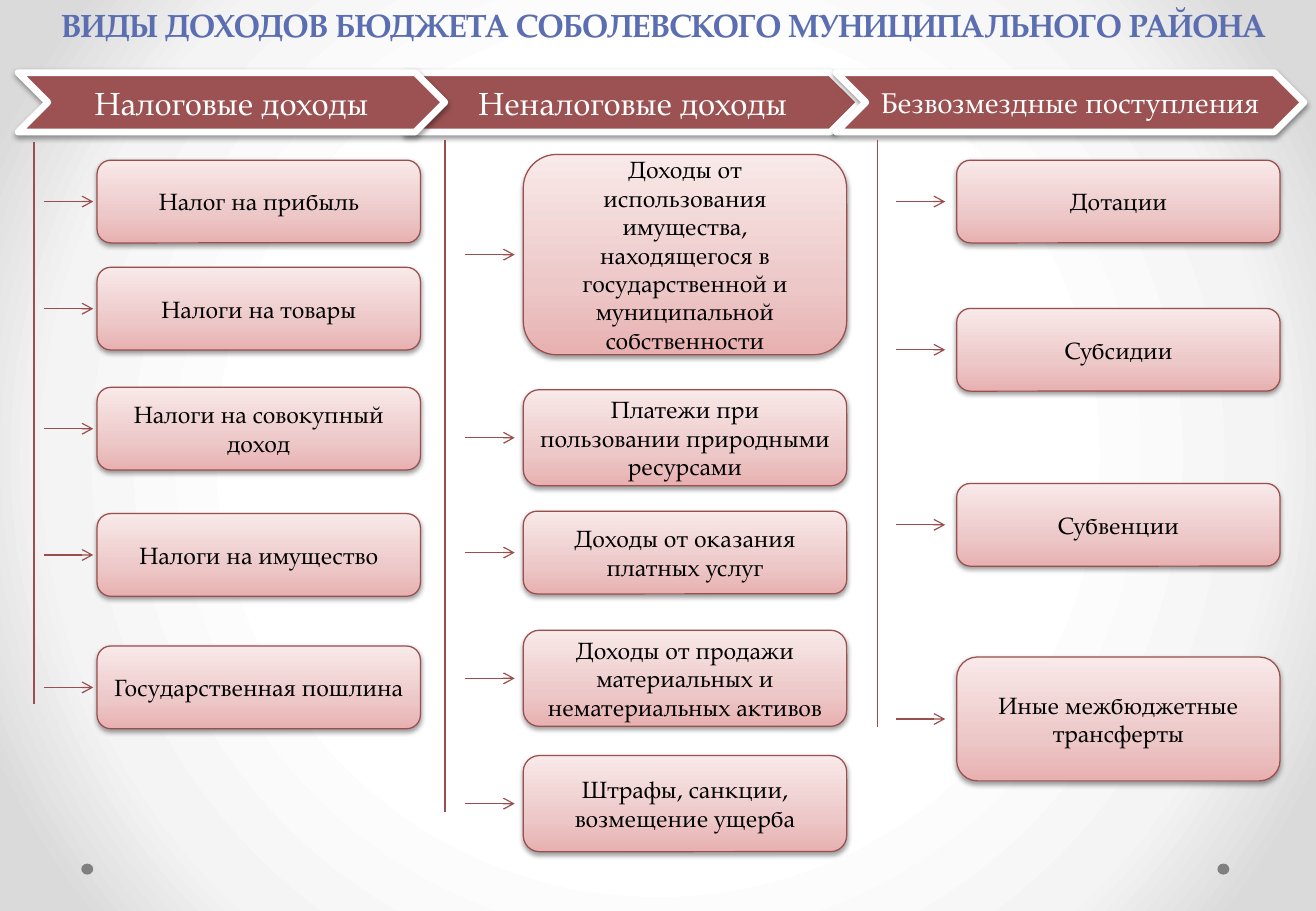
import pptx
import pptx.util
import pptx.dml.color
import pptx.enum.shapes
import pptx.enum.text
import pptx.oxml
import pptx.oxml.ns
from pptx.util import Cm

SHAPES = pptx.enum.shapes.MSO_SHAPE
NAMESPACE = pptx.oxml.ns.nsdecls("a")
BOX_WIDTH = 6.76
ARROW_LENGTH = 1.04


def color(value):
    return pptx.dml.color.RGBColor.from_string(value)


def set_attributes(target, values):
    for name, value in values.items():
        setattr(target, name, value)


class IncomeSlide:
    font_name = "TeX Gyre Pagella"
    line_color = "9A4E4E"
    banner_color = "9C5252"
    title_color = "5A6EB1"
    dot_color = "808080"
    box_stops = ((0, "E8B0B0"), (35, "EDC8C8"), (100, "F9E9E9"))
    background_stops = ((50, "FFFFFF"), (76, "F4F4F4"), (92, "DADADA"))

    def __init__(self, presentation):
        self.slide = presentation.slides.add_slide(presentation.slide_layouts[6])

    def gradient(self, fill, element, stops, direction):
        fill.gradient()
        current = element.find(".//" + pptx.oxml.ns.qn("a:gradFill"))
        stop_xml = "".join(
            f'<a:gs pos="{position * 1000}"><a:srgbClr val="{value}"/></a:gs>'
            for position, value in stops
        )
        replacement = pptx.oxml.parse_xml(
            f'<a:gradFill {NAMESPACE} rotWithShape="1">'
            f"<a:gsLst>{stop_xml}</a:gsLst>{direction}</a:gradFill>"
        )
        current.getparent().replace(current, replacement)

    def background(self):
        direction = (
            '<a:path path="circle">'
            '<a:fillToRect l="50000" t="50000" r="50000" b="50000"/></a:path>'
        )
        self.gradient(self.slide.background.fill, self.slide.element,
                      self.background_stops, direction)

    def shadow(self, shape):
        shape.shadow.inherit = False
        effects = shape.element.spPr.find(pptx.oxml.ns.qn("a:effectLst"))
        effects.append(pptx.oxml.parse_xml(
            f'<a:outerShdw {NAMESPACE} blurRad="39370" dist="20320" dir="5400000" '
            'rotWithShape="0"><a:srgbClr val="000000"><a:alpha val="38000"/>'
            "</a:srgbClr></a:outerShdw>"
        ))

    def label(self, shape, text, size, text_color, bold=False):
        frame = shape.text_frame
        set_attributes(frame, {
            "word_wrap": True,
            "vertical_anchor": pptx.enum.text.MSO_ANCHOR.MIDDLE,
        })
        paragraph = frame.paragraphs[0]
        paragraph.alignment = pptx.enum.text.PP_ALIGN.CENTER
        run = paragraph.add_run()
        run.text = text
        set_attributes(run.font, {
            "name": self.font_name, "size": pptx.util.Pt(size), "bold": bold,
        })
        run.font.color.rgb = color(text_color)

    def title(self, text):
        shape = self.slide.shapes.add_textbox(Cm(-0.66), Cm(0), Cm(29.06), Cm(1.52))
        self.label(shape, text, 19, self.title_color, bold=True)
        shape.text_frame.vertical_anchor = pptx.enum.text.MSO_ANCHOR.TOP

    def dot(self, left):
        shape = self.slide.shapes.add_shape(
            SHAPES.OVAL, Cm(left), Cm(18.06), Cm(0.25), Cm(0.23))
        shape.shadow.inherit = False
        shape.fill.solid()
        shape.fill.fore_color.rgb = color(self.dot_color)
        shape.line.fill.background()

    def banner(self, text, left, width, size):
        shape = self.slide.shapes.add_shape(
            SHAPES.CHEVRON, Cm(left), Cm(1.52), Cm(width), Cm(1.24))
        shape.fill.solid()
        shape.fill.fore_color.rgb = color(self.banner_color)
        shape.line.color.rgb = color("FFFFFF")
        shape.line.width = pptx.util.Pt(4)
        self.shadow(shape)
        self.label(shape, text, size, "FFFFFF")

    def box(self, text, left, top, height):
        shape = self.slide.shapes.add_shape(
            SHAPES.ROUNDED_RECTANGLE, Cm(left), Cm(top), Cm(BOX_WIDTH), Cm(height))
        self.gradient(shape.fill, shape.element, self.box_stops,
                      '<a:lin ang="16200000" scaled="1"/>')
        shape.line.color.rgb = color(self.line_color)
        shape.line.width = pptx.util.Pt(0.75)
        self.shadow(shape)
        self.label(shape, text, 14, "000000")

    def line(self, start_x, start_y, end_x, end_y, arrow=False):
        connector = self.slide.shapes.add_connector(
            pptx.enum.shapes.MSO_CONNECTOR.STRAIGHT,
            Cm(start_x), Cm(start_y), Cm(end_x), Cm(end_y))
        connector.line.color.rgb = color(self.line_color)
        connector.line.width = pptx.util.Pt(0.75)
        properties = connector.element.spPr
        if arrow:
            properties.find(pptx.oxml.ns.qn("a:ln")).append(
                pptx.oxml.parse_xml(f'<a:tailEnd {NAMESPACE} type="arrow"/>'))
        properties.append(pptx.oxml.parse_xml(f"<a:effectLst {NAMESPACE}/>"))

    def column(self, line_x, line_top, line_bottom, arrow_x, box_x, boxes):
        self.line(line_x, line_top, line_x, line_bottom)
        for text, top, height in boxes:
            self.box(text, box_x, top, height)
            middle = top + height / 2
            self.line(arrow_x, middle, arrow_x + ARROW_LENGTH, middle, arrow=True)


def main():
    presentation = pptx.Presentation()
    set_attributes(presentation, {"slide_width": Cm(27.51), "slide_height": Cm(19.05)})
    slide = IncomeSlide(presentation)
    slide.background()
    for left in (25.45, 1.7):
        slide.dot(left)
    slide.title("ВИДЫ ДОХОДОВ БЮДЖЕТА СОБОЛЕВСКОГО МУНИЦИПАЛЬНОГО РАЙОНА")
    for banner in (
        ("Неналоговые доходы", 8.48, 9.5, 19),
        ("Безвозмездные поступления", 17.48, 9.78, 17),
        ("Налоговые доходы", 0.38, 8.92, 19),
    ):
        slide.banner(*banner)
    slide.column(0.71, 2.97, 14.73, 0.91, 2.03, (
        ("Налог на прибыль", 3.35, 1.73),
        ("Налоги на товары", 5.59, 1.73),
        ("Налоги на совокупный доход", 8.1, 1.73),
        ("Налоги на имущество", 10.74, 1.73),
        ("Государственная пошлина", 13.51, 1.73),
    ))
    slide.column(9.3, 2.92, 16.97, 9.72, 10.94, (
        ("Доходы от использования имущества, находящегося в государственной "
         "и муниципальной собственности", 3.23, 4.19),
        ("Платежи при пользовании природными ресурсами", 8.15, 2.01),
        ("Доходы от оказания платных услуг", 10.69, 1.73),
        ("Доходы от продажи материальных и нематериальных активов", 13.18, 2.01),
        ("Штрафы, санкции, возмещение ущерба", 15.8, 2.01),
    ))
    slide.column(18.34, 2.92, 15.21, 18.72, 20, (
        ("Дотации", 3.35, 1.73),
        ("Субсидии", 6.45, 1.73),
        ("Субвенции", 10.11, 1.73),
        ("Иные межбюджетные трансферты", 13.74, 2.59),
    ))
    presentation.save("out.pptx")


if __name__ == "__main__":
    main()
